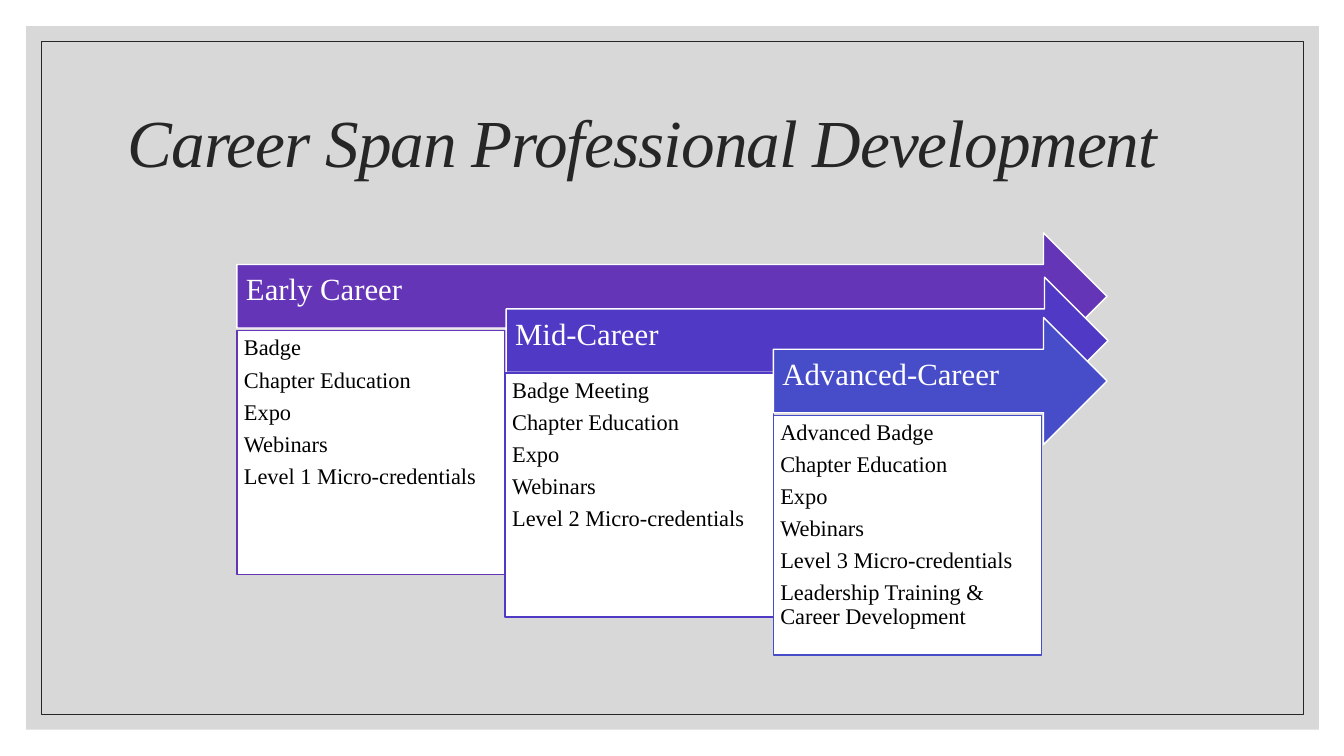
import pptx
import pptx.util
import pptx.dml.color
import pptx.enum.shapes
import pptx.enum.text
import lxml.etree

# Content: arrow and list geometry is (left, top, width, height) in px
TITLE = "Career Span Professional Development"
STAGES = [
    {"name": "Early Career", "color": "6535B7",
     "arrow": (235, 231, 863, 126), "list": (235, 328, 266, 242),
     "items": ["Badge", "Chapter Education", "Expo", "Webinars",
               "Level 1 Micro-credentials"]},
    {"name": "Mid-Career", "color": "5039C5",
     "arrow": (502, 275, 597, 126), "list": (501, 370, 266, 242),
     "items": ["Badge Meeting", "Chapter Education", "Expo", "Webinars",
               "Level 2 Micro-credentials"]},
    {"name": "Advanced-Career", "color": "474DC9",
     "arrow": (767, 315, 331, 126), "list": (767, 412, 266, 238),
     "items": ["Advanced Badge", "Chapter Education", "Expo", "Webinars",
               "Level 3 Micro-credentials",
               "Leadership Training & Career Development"]},
]

# Format
EMU_PER_PX = 9144
SLIDE_WIDTH, SLIDE_HEIGHT = 1333, 750
FONT = "Times New Roman"
WHITE = pptx.dml.color.RGBColor(0xFF, 0xFF, 0xFF)
BLACK = pptx.dml.color.RGBColor(0x00, 0x00, 0x00)
INK = pptx.dml.color.RGBColor(0x26, 0x26, 0x26)
GRAY = pptx.dml.color.RGBColor(0xBF, 0xBF, 0xBF)
RECTANGLE = pptx.enum.shapes.MSO_SHAPE.RECTANGLE
RIGHT_ARROW = pptx.enum.shapes.MSO_SHAPE.RIGHT_ARROW
TOP = pptx.enum.text.MSO_ANCHOR.TOP
MIDDLE = pptx.enum.text.MSO_ANCHOR.MIDDLE
DRAWING = "{http://schemas.openxmlformats.org/drawingml/2006/main}"


def px(length):
    return pptx.util.Emu(round(length * EMU_PER_PX))


def add_shape(slide, kind, box, fill=None, line=None, line_width=1):
    shape = slide.shapes.add_shape(kind, *map(px, box))
    shape.shadow.inherit = False
    if fill is None:
        shape.fill.background()
    else:
        shape.fill.solid()
        shape.fill.fore_color.rgb = fill
    if line is None:
        shape.line.fill.background()
    else:
        shape.line.color.rgb = line
        shape.line.width = pptx.util.Pt(line_width)
    return shape


def write_text(shape, lines, size, color, anchor=TOP, margins=(7, 6, 7, 7),
               space_after=0.35, italic=False, tracking=0):
    frame = shape.text_frame
    frame.word_wrap = True
    frame.vertical_anchor = anchor
    (frame.margin_left, frame.margin_top,
     frame.margin_right, frame.margin_bottom) = map(px, margins)
    for index, line in enumerate(lines):
        paragraph = frame.paragraphs[0] if index == 0 else frame.add_paragraph()
        paragraph.alignment = pptx.enum.text.PP_ALIGN.LEFT
        paragraph.line_spacing = 0.9
        paragraph.space_after = pptx.util.Pt(size * space_after)
        run = paragraph.add_run()
        run.text = line
        run.font.name = FONT
        run.font.size = pptx.util.Pt(size)
        run.font.italic = italic
        run.font.color.rgb = color
        if tracking:
            run.font._element.set("spc", str(tracking))


def add_stage(slide, stage):
    color = pptx.dml.color.RGBColor.from_string(stage["color"])
    left, top, width, height = stage["arrow"]

    # Arrow, with its heading on the shaft (the middle half of its height)
    add_shape(slide, RIGHT_ARROW, stage["arrow"], fill=color, line=WHITE)
    shaft = (left, top + height / 4, width - height / 4, height / 2)
    heading = slide.shapes.add_textbox(*map(px, shaft))
    write_text(heading, [stage["name"]], 22, WHITE, anchor=MIDDLE,
               margins=(9, 9, 28, 20))

    # List of activities
    card = add_shape(slide, RECTANGLE, stage["list"], fill=WHITE, line=color)
    write_text(card, stage["items"], 16, BLACK)


def main():
    presentation = pptx.Presentation()
    presentation.slide_width = px(SLIDE_WIDTH)
    presentation.slide_height = px(SLIDE_HEIGHT)
    slide = presentation.slides.add_slide(presentation.slide_layouts[6])

    # Translucent panel and thin frame
    panel = add_shape(slide, RECTANGLE, (26, 26, 1282, 698), fill=GRAY)
    panel_color = panel._element.spPr.find(f"{DRAWING}solidFill/{DRAWING}srgbClr")
    lxml.etree.SubElement(panel_color, f"{DRAWING}alpha", val="60000")
    add_shape(slide, RECTANGLE, (41, 41, 1252, 668), line=INK, line_width=0.5)

    # Title
    title = slide.shapes.add_textbox(*map(px, (117, 70, 1100, 150)))
    write_text(title, [TITLE], 48, INK, anchor=MIDDLE, margins=(10, 5, 10, 5),
               space_after=0, italic=True, tracking=-70)

    # Career stages, each over the one before
    for stage in STAGES:
        add_stage(slide, stage)

    presentation.save("out.pptx")


if __name__ == "__main__":
    main()
